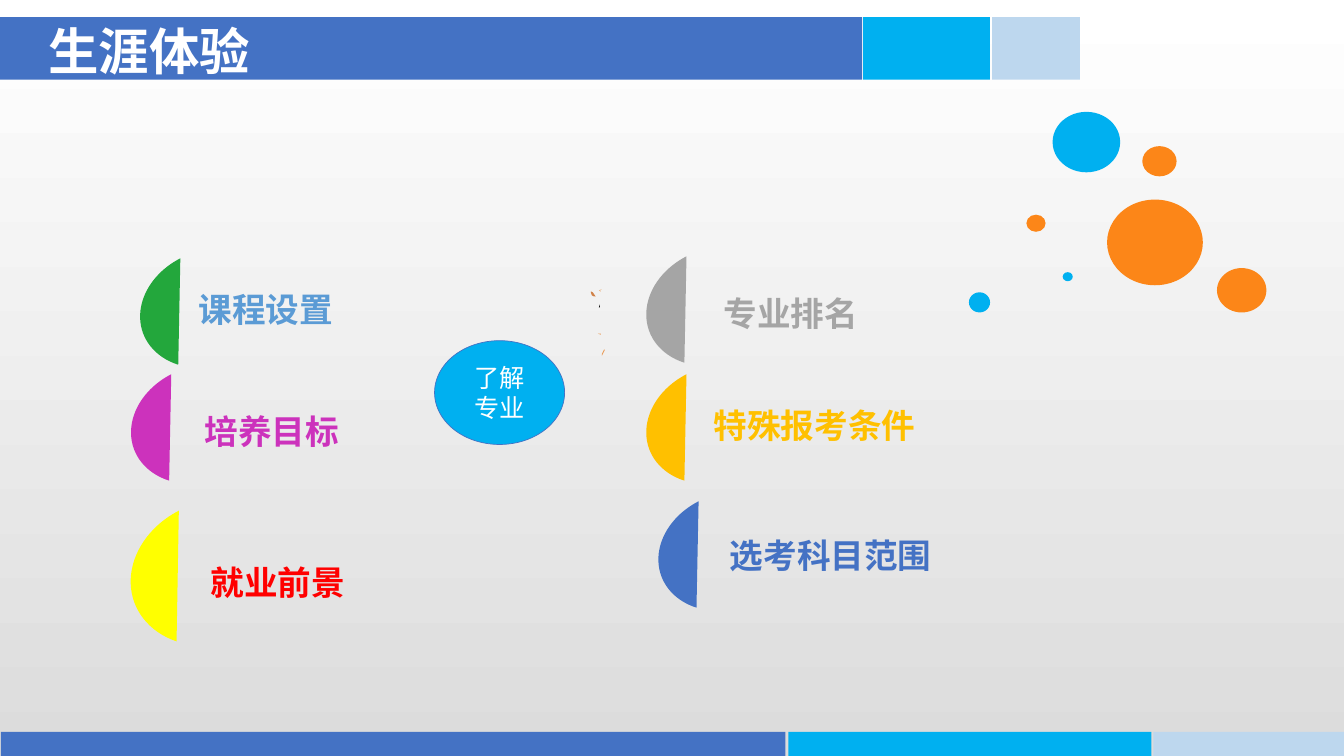
from pptx import Presentation
from pptx.dml.color import RGBColor
from pptx.enum.shapes import MSO_SHAPE
from pptx.enum.text import MSO_ANCHOR, MSO_AUTO_SIZE, PP_ALIGN
from pptx.util import Pt

PX = 9144
NAVY, SKY, PALE, ORANGE = "4472C4", "00B0F0", "BDD7EE", "FC8618"
BUBBLES = [(0, 179, 21, 20, SKY), (137, 87, 95, 85, ORANGE), (83, 0, 67, 60, SKY),
           (246, 155, 49, 44, ORANGE), (172, 34, 34, 30, ORANGE),
           (57, 102, 19, 17, ORANGE), (93, 159, 10, 9, SKY)]
SPECKS = [("E99D5A", [(11, 66), (11, 64), (13, 60), (14, 60)]),
          ("E99D5A", [(7, 44), (10, 44), (10, 45)]),
          ("000000", [(9, 18), (9, 15), (8, 18)]),
          ("D08147", [(1, 6), (3, 7), (5, 7), (4, 6), (2, 3), (0, 2), (0, 3)]),
          ("E99D5A", [(9, 2), (10, 0), (11, 0), (8, 1), (10, 2)])]
TOPICS = [((665, 476, 115, 142), NAVY, "选考科目范围", NAVY, (49, 54, 266, 34), 1.2),
          ((151, 235, 115, 142), "23A73C", "课程设置", "5B9BD5", (36, 51, 266, 34), 1.2),
          ((653, 233, 115, 142), "A5A5A5", "专业排名", "A5A5A5", (55, 57, 266, 34), 1.2),
          ((142, 350, 115, 142), "CC32BC", "培养目标", "CC32BC", (51, 57, 266, 34), 1.2),
          ((653, 350, 115, 142), "FFC000", "特殊报考条件", "FFC000", (45, 51, 266, 34), 1.2),
          ((143, 482, 142, 172), "FFFF00", "就业前景", "FF0000", (56, 70, 161, 50), 1.0)]


def rgb(hex_color):
    """Turn a hex string into a colour."""
    return RGBColor.from_string(hex_color)


def apply(target, formats):
    """Set each attribute in a dict of format values."""
    for attribute, value in formats.items():
        setattr(target, attribute, value)


def paint(shape, color):
    """Give a shape a plain fill without line or shadow."""
    shape.shadow.inherit = False
    shape.fill.solid()
    shape.fill.fore_color.rgb = rgb(color)
    shape.line.fill.background()
    return shape


def add_preset(slide, kind, box, color):
    """Draw a filled preset shape in a px box."""
    return paint(slide.shapes.add_shape(kind, *(length * PX for length in box)), color)


def write(shape, text, size, color, font="Arial", bold=True, spacing=1.0, align=PP_ALIGN.LEFT):
    """Write one vertically centred paragraph in a shape."""
    frame = shape.text_frame
    frame.text = text
    apply(frame, {"word_wrap": True, "auto_size": MSO_AUTO_SIZE.NONE,
                  "vertical_anchor": MSO_ANCHOR.MIDDLE})
    paragraph = frame.paragraphs[0]
    apply(paragraph, {"alignment": align, "line_spacing": spacing})
    run_font = paragraph.runs[0].font
    apply(run_font, {"name": font, "size": Pt(size), "bold": bold})
    run_font.color.rgb = rgb(color)


def add_background(slide):
    """Fill the slide from white at the top to grey at the bottom."""
    fill = slide.background.fill
    fill.gradient()
    fill.gradient_angle = 270
    for stop, position, color in zip(fill.gradient_stops, (0, 1), ("FFFFFF", "DCDCDC")):
        stop.position = position
        stop.color.rgb = rgb(color)


def add_band(slide, top, height, spans):
    """Draw a row of three coloured bars."""
    for (left, width), color in zip(spans, (NAVY, SKY, PALE)):
        add_preset(slide, MSO_SHAPE.RECTANGLE, (left, top, width, height), color)


def add_title(slide, left, top, width, height):
    """Place the title on top of the header band."""
    title = slide.shapes.title
    apply(title, {"left": left * PX, "top": top * PX,
                  "width": width * PX, "height": height * PX})
    write(title, "生涯体验", 36, "FFFFFF", font="Noto Sans CJK SC")
    title.element.getparent().append(title.element)


def add_bubbles(slide, left, top):
    """Scatter the decorative bubbles from a corner."""
    for x, y, width, height, color in BUBBLES:
        add_preset(slide, MSO_SHAPE.OVAL, (left + x, top + y, width, height), color)


def add_specks(slide, left, top):
    """Draw the tiny flecks above the hub."""
    for color, offsets in SPECKS:
        start, *rest = [(left + x, top + y) for x, y in offsets]
        outline = slide.shapes.build_freeform(*start, scale=PX)
        outline.add_line_segments(rest)
        paint(outline.convert_to_shape(), color)


def add_topic(slide, box, fill, text, color, label_box, spacing):
    """Draw a tilted chord and its label, offset from the chord box."""
    chord = add_preset(slide, MSO_SHAPE.CHORD, box, fill)
    chord.rotation = 70
    chord.adjustments[0] = 29.761
    chord.adjustments[1] = 101.489
    x, y, width, height = label_box
    label = slide.shapes.add_textbox((box[0] + x) * PX, (box[1] + y) * PX,
                                     width * PX, height * PX)
    write(label, text, 24, color, spacing=spacing)


def add_hub(slide, box):
    """Draw the central oval."""
    hub = add_preset(slide, MSO_SHAPE.OVAL, box, SKY)
    hub.line.color.rgb = rgb(NAVY)
    hub.line.width = Pt(0.5)
    write(hub, "了解专业", 18, "FFFFFF", bold=False, align=PP_ALIGN.CENTER)


def main():
    """Build and save the slide."""
    deck = Presentation()
    apply(deck, {"slide_width": 1333 * PX, "slide_height": 750 * PX})
    slide = deck.slides.add_slide(deck.slide_layouts[5])
    add_background(slide)
    add_band(slide, 17, 62, [(0, 855), (856, 126), (984, 87)])
    add_band(slide, 726, 24, [(1, 778), (782, 360), (1144, 189)])
    add_bubbles(slide, 961, 111)
    add_specks(slide, 586, 287)
    for topic in TOPICS:
        add_topic(slide, *topic)
    add_hub(slide, (431, 338, 129, 103))
    add_title(slide, 38, 24, 388, 51)
    deck.save("out.pptx")


if __name__ == "__main__":
    main()
